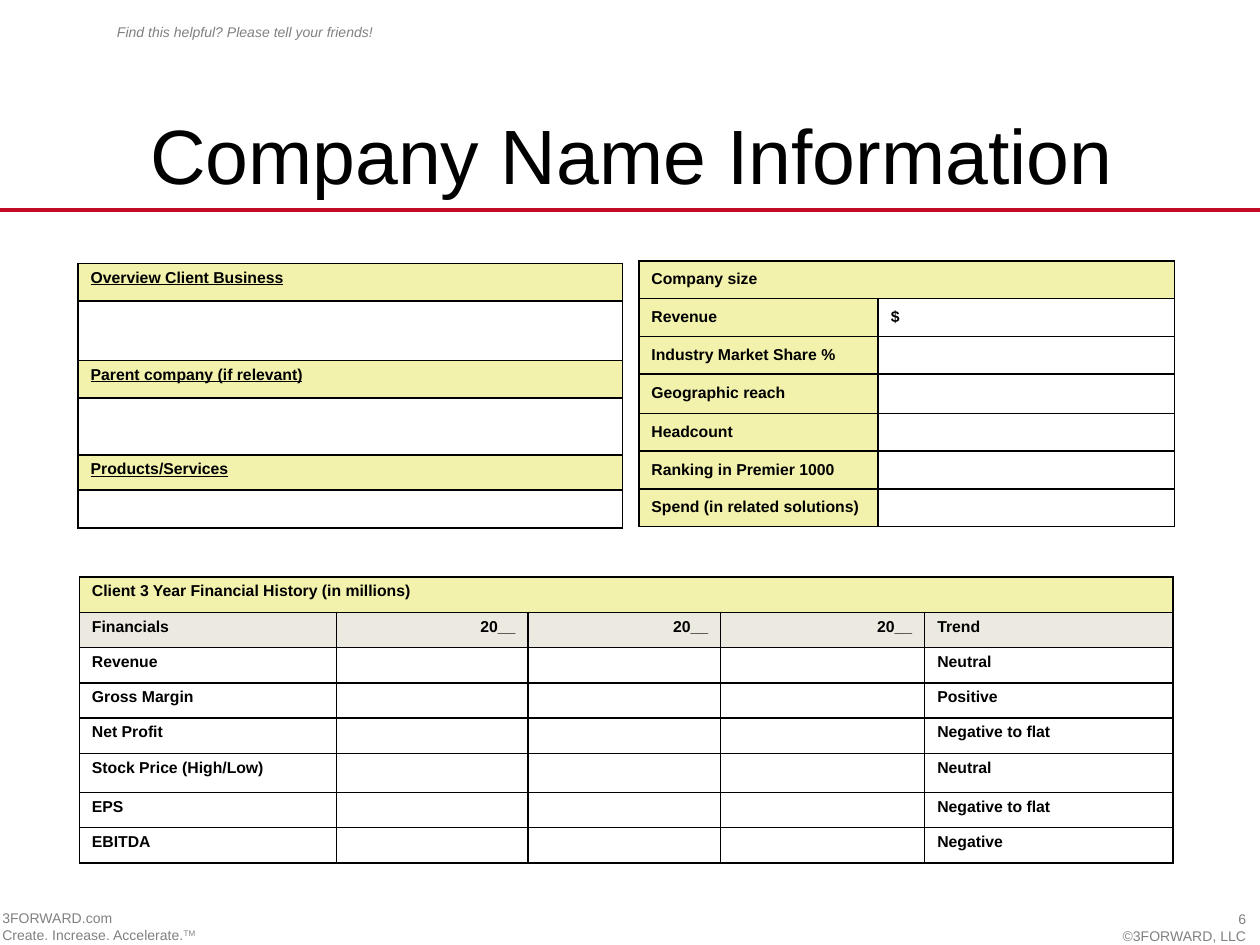
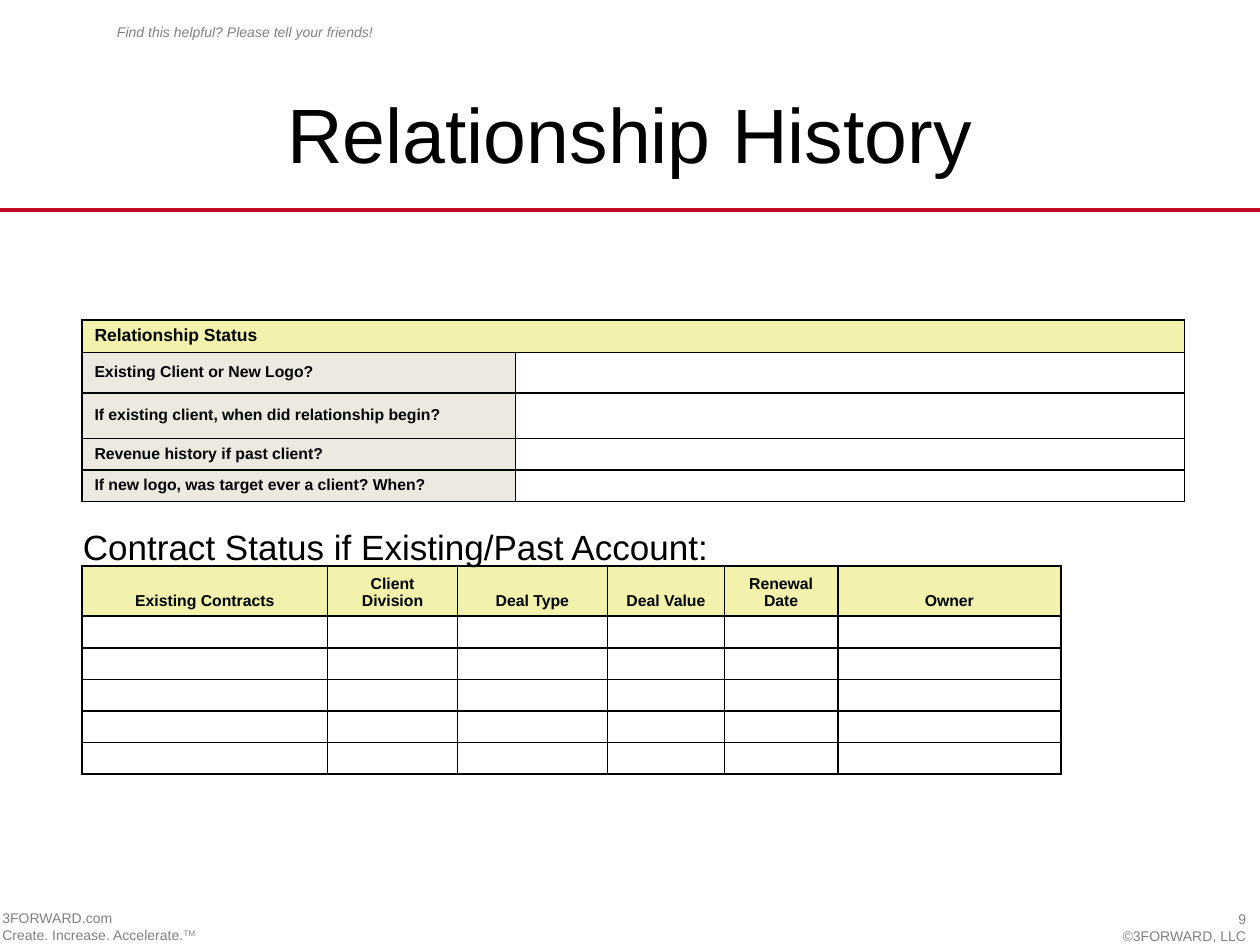
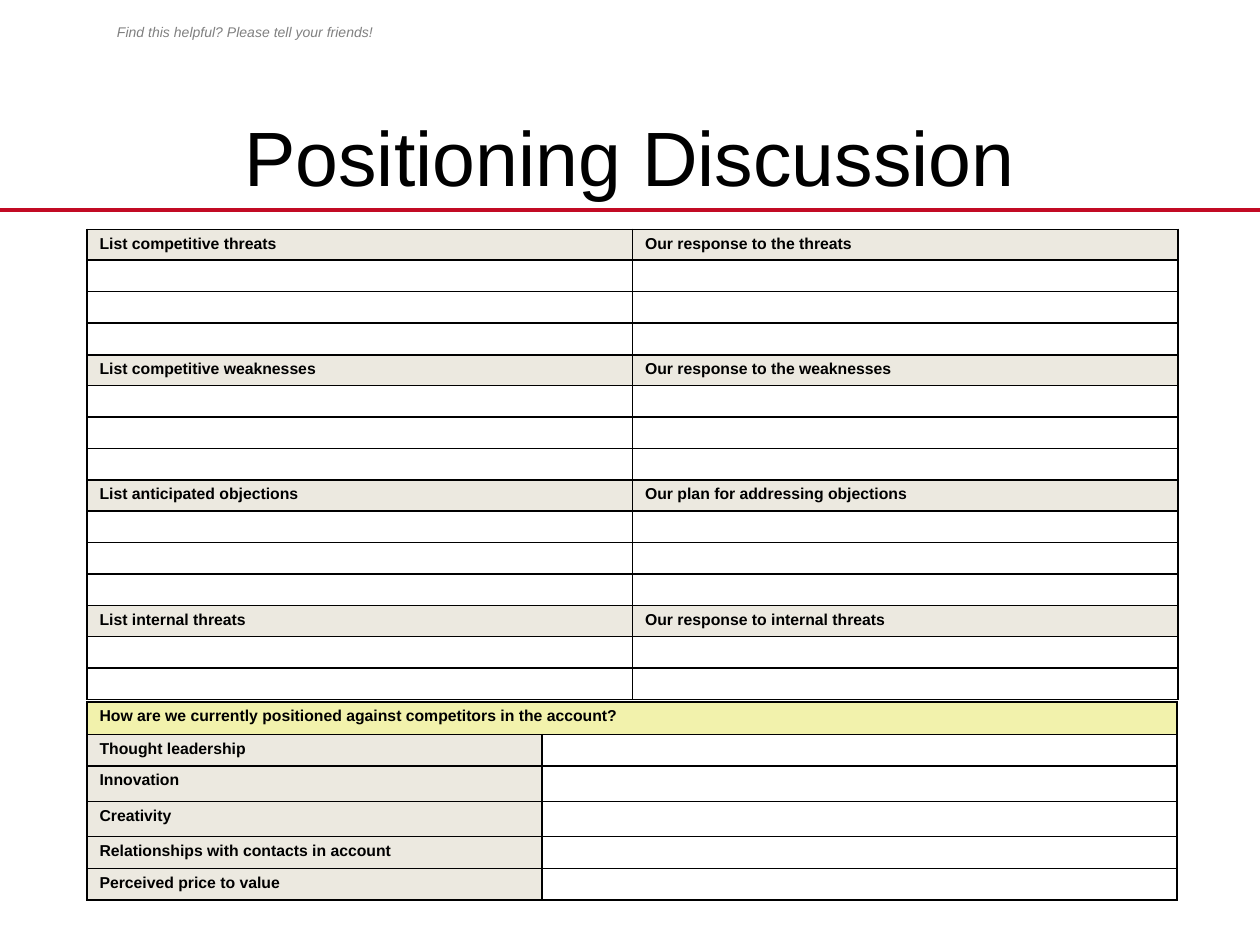
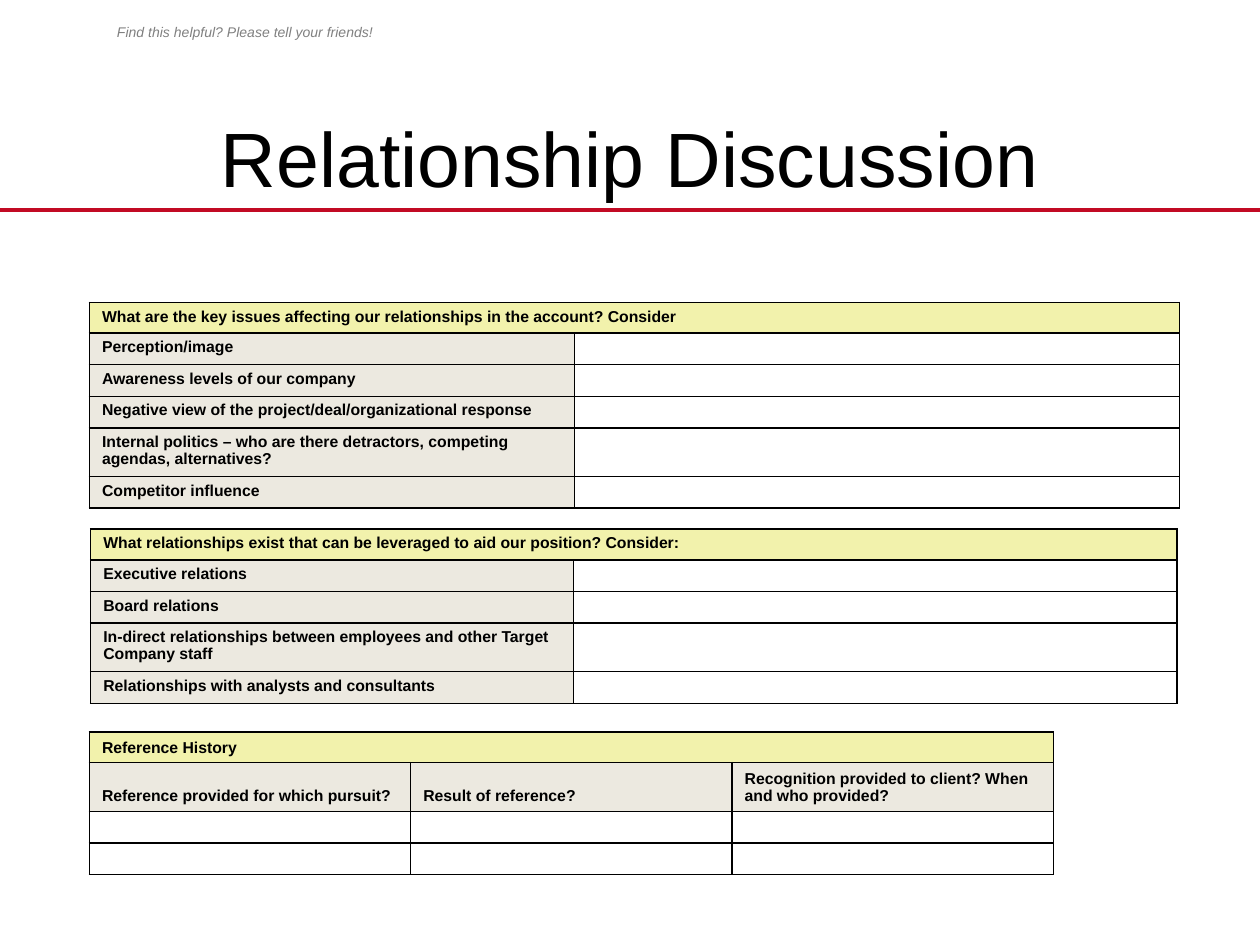
"""Build four account planning slides with titled tables."""
import pptx
import pptx.util
import pptx.dml.color
import pptx.enum.shapes
import pptx.enum.text
import pptx.oxml
import pptx.oxml.ns
from lxml import etree

Inches = pptx.util.Inches
Pt = pptx.util.Pt
qn = pptx.oxml.ns.qn
ALIGN = pptx.enum.text.PP_ALIGN
ANCHOR = pptx.enum.text.MSO_ANCHOR
HUES = {"red": "C20A24", "grey": "808080", "black": "000000",
        "lime": "F2F2AC", "sand": "ECE9E0"}
ROW = 0.24
TALL = 0.37


def hue(name):
    return pptx.dml.color.RGBColor.from_string(HUES[name])


class Deck:
    """Hold the shared style and the current slide."""

    def __init__(self):
        self.prs = pptx.Presentation()
        self.prs.slide_width = Inches(10)
        self.prs.slide_height = Inches(7.5)
        self.slide = None

    def style(self, para, size, color="black", bold=None, italic=None):
        font = para.font
        font.name = "Arial"
        font.size = Pt(size)
        font.bold = bold
        font.italic = italic
        font.color.rgb = hue(color)

    def text(self, box, lines, size, color="black", align=ALIGN.LEFT,
             anchor=ANCHOR.TOP, italic=None):
        frame = self.slide.shapes.add_textbox(*map(Inches, box)).text_frame
        frame.word_wrap = True
        frame.vertical_anchor = anchor
        for i, line in enumerate(lines):
            para = frame.add_paragraph() if i else frame.paragraphs[0]
            para.alignment = align
            self.style(para, size, color, italic=italic)
            para.add_run().text = line
        return frame

    def rule(self, y):
        line = self.slide.shapes.add_connector(
            pptx.enum.shapes.MSO_CONNECTOR.STRAIGHT,
            Inches(0), Inches(y), Inches(10), Inches(y))
        line.line.color.rgb = hue("red")
        line.line.width = Pt(2.25)
        etree.SubElement(line._element.spPr, qn("a:effectLst"))

    def page(self, title, box):
        self.slide = self.prs.slides.add_slide(self.prs.slide_layouts[6])
        self.rule(1.67)
        self.text((0.83, 0.14, 3.08, 0.24),
                  ["Find this helpful? Please tell your friends!"],
                  8, "grey", italic=True)
        self.text(box, [title], 44, align=ALIGN.CENTER, anchor=ANCHOR.MIDDLE)

    def foot(self, number):
        self.text((7.66, 7.18, 2.33, 0.32), [number, "©3FORWARD, LLC"],
                  8, "grey", ALIGN.RIGHT)
        frame = self.text((-0.08, 7.17, 3.67, 0.37),
                          ["3FORWARD.com", "Create. Increase. Accelerate."],
                          8, "grey")
        mark = frame.paragraphs[1].add_run()
        mark.text = "TM"
        mark._r.get_or_add_rPr().set("baseline", "30000")

    def edge(self, cell):
        props = cell._tc.get_or_add_tcPr()
        for i, side in enumerate(("lnL", "lnR", "lnT", "lnB")):
            line = etree.Element(qn("a:" + side), w=str(Pt(1)))
            fill = etree.SubElement(line, qn("a:solidFill"))
            etree.SubElement(fill, qn("a:srgbClr"), val=HUES["black"])
            props.insert(i, line)

    def cell(self, cell, words, fill, anchor):
        if fill:
            cell.fill.solid()
            cell.fill.fore_color.rgb = hue(fill)
        else:
            cell.fill.background()
        self.edge(cell)
        cell.vertical_anchor = anchor
        para = cell.text_frame.paragraphs[0]
        para.line_spacing = 0.95
        self.style(para, 9, bold=True)
        if words:
            para.add_run().text = words
        else:
            etree.SubElement(para._p, qn("a:endParaRPr"), sz="900")

    def table(self, left, top, cols, highs, rows, heads, side=None,
              anchor=ANCHOR.TOP):
        grid = self.slide.shapes.add_table(
            len(rows), len(cols), Inches(left), Inches(top),
            Inches(sum(cols)), Inches(sum(highs))).table
        grid.first_row = grid.horz_banding = False
        for col, width in zip(grid.columns, cols):
            col.width = Inches(width)
        for r, (row, high) in enumerate(zip(rows, highs)):
            grid.rows[r].height = Inches(high)
            for c in range(len(cols)):
                words = row[c] if c < len(row) else ""
                fill = heads.get(r, None if c else side)
                self.cell(grid.cell(r, c), words, fill, anchor)
            if r in heads and len(row) < len(cols):
                grid.cell(r, 0).merge(grid.cell(r, len(cols) - 1))
        return grid

    def company(self):
        self.page("Company Name Information", (0.52, 0.76, 8.99, 0.92))
        self.table(5.07, 2.07, [1.9, 2.35], [0.3] * 3 + [0.31] + [0.3] * 3, [
            ["Company size"],
            ["Revenue", "$"],
            ["Industry Market Share %"],
            ["Geographic reach"],
            ["Headcount"],
            ["Ranking in Premier 1000"],
            ["Spend (in related solutions)"],
        ], {0: "lime"}, "lime", ANCHOR.MIDDLE)
        years = ["20__"] * 3
        trends = [("Revenue", "Neutral"), ("Gross Margin", "Positive"),
                  ("Net Profit", "Negative to flat"),
                  ("Stock Price (High/Low)", "Neutral"),
                  ("EPS", "Negative to flat"), ("EBITDA", "Negative")]
        grid = self.table(
            0.63, 4.58, [2.04, 1.52, 1.53, 1.62, 1.97],
            [0.28] * 5 + [0.31] + [0.28] * 2,
            [["Client 3 Year Financial History (in millions)"],
             ["Financials", *years, "Trend"]]
            + [[name, "", "", "", trend] for name, trend in trends],
            {0: "lime", 1: "sand"})
        for c in range(1, 4):
            grid.cell(1, c).text_frame.paragraphs[0].alignment = ALIGN.RIGHT
        grid = self.table(0.62, 2.09, [4.32],
                          [0.3, 0.47, 0.3, 0.45, 0.28, 0.3], [
            ["Overview Client Business"], [],
            ["Parent company (if relevant)"], [],
            ["Products/Services"], [],
        ], dict.fromkeys((0, 2, 4), "lime"))
        for r in (0, 2, 4):
            grid.cell(r, 0).text_frame.paragraphs[0].font.underline = True
        self.foot("6")

    def history(self):
        self.page("Relationship History", (0.5, 0.43, 9, 1.25))
        names = ["Existing Contracts", "Client Division", "Deal Type",
                 "Deal Value", "Renewal Date", "Owner"]
        grid = self.table(0.65, 4.49, [1.95, 1.03, 1.19, 0.93, 0.9, 1.77],
                          [0.4] + [0.25] * 5, [names] + [[]] * 5,
                          {0: "lime"}, anchor=ANCHOR.BOTTOM)
        for c in range(len(names)):
            grid.cell(0, c).text_frame.paragraphs[0].alignment = ALIGN.CENTER
        grid = self.table(0.65, 2.54, [3.44, 5.31],
                          [0.25, 0.32, 0.36, ROW, ROW], [
            ["Relationship Status"],
            ["Existing Client or New Logo?"],
            ["If existing client, when did relationship begin?"],
            ["Revenue history if past client?"],
            ["If new logo, was target ever a client? When?"],
        ], {0: "lime"}, "sand", ANCHOR.MIDDLE)
        grid.cell(0, 0).text_frame.paragraphs[0].font.size = Pt(10)
        self.text((0.56, 4.12, 7.6, 0.44),
                  ["Contract Status if Existing/Past Account:"], 20)
        self.foot("9")

    def position(self):
        self.page("Positioning Discussion", (0.5, 0.82, 9, 0.83))
        self.table(0.69, 5.57, [3.61, 5.04],
                   [0.26, ROW, 0.28, 0.28, ROW, ROW], [
            ["How are we currently positioned against competitors "
             "in the account?"],
            ["Thought leadership"],
            ["Innovation"],
            ["Creativity"],
            ["Relationships with contacts in account"],
            ["Perceived price to value"],
        ], {0: "lime"}, "sand")
        pairs = [
            ["List competitive threats", "Our response to the threats"],
            ["List competitive weaknesses", "Our response to the weaknesses"],
            ["List anticipated objections",
             "Our plan for addressing objections"],
            ["List internal threats", "Our response to internal threats"],
        ]
        rows = [row for pair in pairs for row in (pair, [], [], [])][:-1]
        self.table(0.69, 1.82, [4.33] * 2, [ROW] * len(rows), rows,
                   dict.fromkeys(range(0, len(rows), 4), "sand"))

    def relate(self):
        self.page("Relationship Discussion", (0.5, 0.82, 9, 0.84))
        self.table(0.71, 2.4, [3.85, 4.8], [ROW] * 4 + [TALL, ROW], [
            ["What are the key issues affecting our relationships "
             "in the account? Consider"],
            ["Perception/image"],
            ["Awareness levels of our company"],
            ["Negative view of the project/deal/organizational response"],
            ["Internal politics – who are there detractors, "
             "competing agendas, alternatives?"],
            ["Competitor influence"],
        ], {0: "lime"}, "sand")
        self.table(0.72, 4.2, [3.83, 4.79], [ROW] * 3 + [TALL, ROW], [
            ["What relationships exist that can be leveraged "
             "to aid our position? Consider:"],
            ["Executive relations"],
            ["Board relations"],
            ["In-direct relationships between employees "
             "and other Target Company staff"],
            ["Relationships with analysts and consultants"],
        ], {0: "lime"}, "sand")
        self.table(0.71, 5.81, [2.55] * 3, [ROW, TALL, ROW, ROW], [
            ["Reference History"],
            ["Reference provided for which pursuit?", "Result of reference?",
             "Recognition provided to client? When and who provided?"],
            [], [],
        ], {0: "lime", 1: "sand"}, anchor=ANCHOR.BOTTOM)


def main():
    deck = Deck()
    deck.company()
    deck.history()
    deck.position()
    deck.relate()
    deck.prs.save("out.pptx")


if __name__ == "__main__":
    main()
